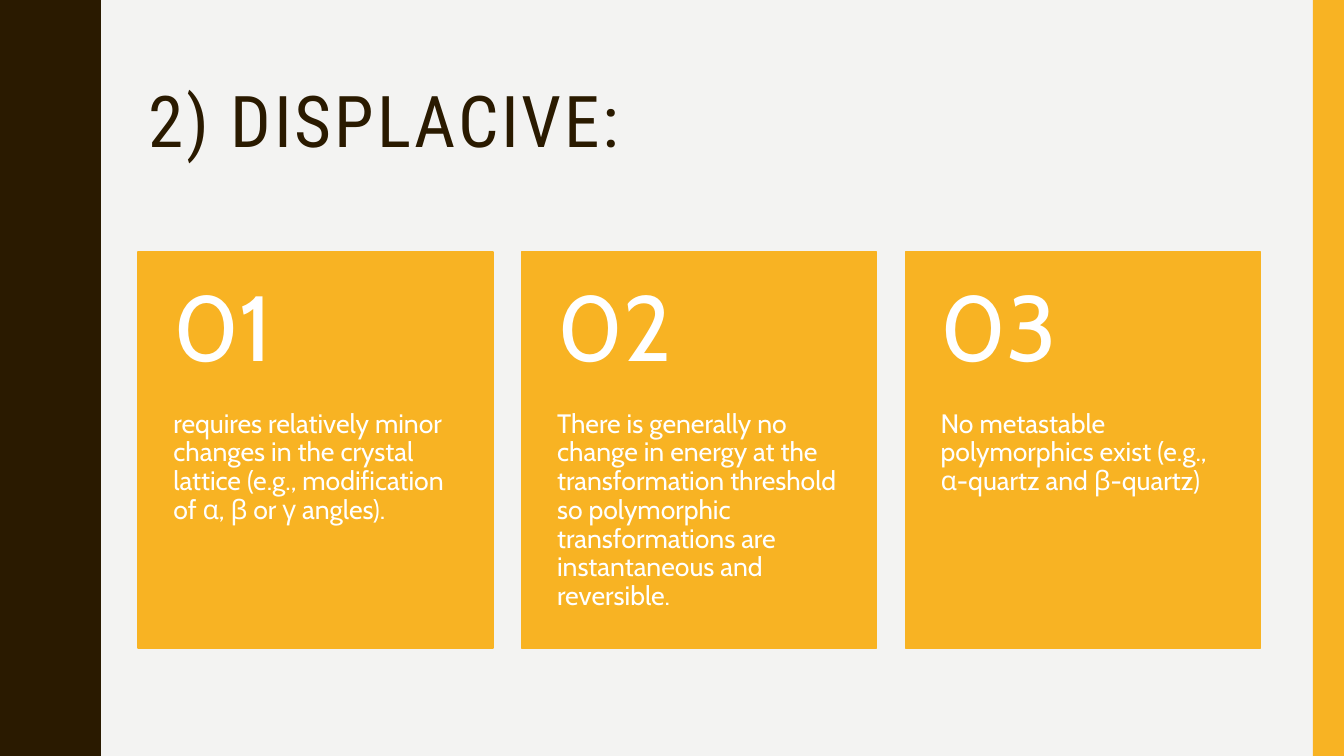
from pptx import Presentation
from pptx.dml.color import RGBColor
from pptx.enum.shapes import MSO_SHAPE
from pptx.enum.text import MSO_ANCHOR, PP_ALIGN
from pptx.util import Inches, Pt

TITLE = "2) DISPLACIVE:"
CARDS = [
    ("01", "requires relatively minor changes in the crystal lattice "
           "(e.g., modification of α, β or γ angles)."),
    ("02", "There is generally no change in energy at the transformation threshold "
           "so polymorphic transformations are instantaneous and reversible."),
    ("03", "No metastable polymorphics exist (e.g., α-quartz and β-quartz)"),
]
COLORS = {"background": "F3F3F2", "dark": "2A1A00", "accent": "F8B323", "white": "FFFFFF"}

SLIDE_WIDTH, SLIDE_HEIGHT = 13.33, 7.5
CARD_LEFT, CARD_TOP, CARD_WIDTH, CARD_HEIGHT = 1.37, 2.5, 3.52, 3.93
CARD_STEP = 3.805
NUMBER_HEIGHT = 1.57
SIDE_BAR_WIDTH = 0.31

# Wavy edge: x and y from one trough to the next crest
WAVE_PERIOD = 1.5
WAVE_RISE = [
    (0.78, 0), (0.78, 0.07), (0.79, 0.14), (0.8, 0.2), (0.81, 0.25), (0.83, 0.29),
    (0.85, 0.33), (0.87, 0.38), (0.89, 0.42), (0.91, 0.46), (0.93, 0.5),
    (0.95, 0.55), (0.96, 0.61), (0.97, 0.68), (0.97, 0.75),
]


def color(name):
    return RGBColor.from_string(COLORS[name])


def paint(shape, name, outlined=False):
    shape.shadow.inherit = False
    shape.fill.solid()
    shape.fill.fore_color.rgb = color(name)
    if outlined:
        shape.line.color.rgb = color(name)
        shape.line.width = Pt(1)
    else:
        shape.line.fill.background()


def write_text(shape, text, *, size, font, fill, anchor=MSO_ANCHOR.TOP,
               insets=(0.1, 0.05, 0.1, 0.05), spacing=0):
    """Fill a shape with one paragraph; insets are left, top, right, bottom in inches."""
    frame = shape.text_frame
    frame.word_wrap = True
    frame.vertical_anchor = anchor
    (frame.margin_left, frame.margin_top,
     frame.margin_right, frame.margin_bottom) = map(Inches, insets)
    paragraph = frame.paragraphs[0]
    paragraph.alignment = PP_ALIGN.LEFT
    paragraph.line_spacing = 0.9
    paragraph.space_before = Pt(0)
    run = paragraph.add_run()
    run.text = text
    run.font.size = Pt(size)
    run.font.name = font
    run.font.color.rgb = color(fill)
    if spacing:
        run._r.get_or_add_rPr().set("spc", str(spacing * 100))


def add_wavy_edge(slide):
    fall = [(x, WAVE_PERIOD - y) for x, y in reversed(WAVE_RISE[:-1])]
    wave = WAVE_RISE + fall
    periods = round(SLIDE_HEIGHT / WAVE_PERIOD)
    points = [(x, y + period * WAVE_PERIOD) for period in range(periods) for x, y in wave]
    builder = slide.shapes.build_freeform(0, 0, scale=Inches(1))
    builder.add_line_segments(points + [(0, SLIDE_HEIGHT)], close=True)
    paint(builder.convert_to_shape(), "dark")


def add_rectangle(slide, left, top, width, height, outlined=False):
    rectangle = slide.shapes.add_shape(
        MSO_SHAPE.RECTANGLE, Inches(left), Inches(top), Inches(width), Inches(height))
    paint(rectangle, "accent", outlined)


def add_card(slide, left, number, text):
    add_rectangle(slide, left, CARD_TOP, CARD_WIDTH, CARD_HEIGHT, outlined=True)
    body = slide.shapes.add_textbox(
        Inches(left), Inches(CARD_TOP + NUMBER_HEIGHT),
        Inches(CARD_WIDTH), Inches(CARD_HEIGHT - NUMBER_HEIGHT))
    write_text(body, text, size=19, font="Cabin", fill="white",
               insets=(0.35, 0, 0.35, 0.36))
    heading = slide.shapes.add_textbox(
        Inches(left), Inches(CARD_TOP), Inches(CARD_WIDTH), Inches(NUMBER_HEIGHT))
    write_text(heading, number, size=66, font="Cabin", fill="white",
               anchor=MSO_ANCHOR.MIDDLE, insets=(0.35, 0.18, 0.35, 0.18))


def main():
    presentation = Presentation()
    presentation.slide_width = Inches(SLIDE_WIDTH)
    presentation.slide_height = Inches(SLIDE_HEIGHT)
    slide = presentation.slides.add_slide(presentation.slide_layouts[5])
    slide.background.fill.solid()
    slide.background.fill.fore_color.rgb = color("background")

    add_wavy_edge(slide)
    add_rectangle(slide, SLIDE_WIDTH - SIDE_BAR_WIDTH, 0, SIDE_BAR_WIDTH, SLIDE_HEIGHT)

    title = slide.shapes.title
    title.left, title.top = Inches(CARD_LEFT), Inches(0.42)
    title.width, title.height = Inches(11.13), Inches(1.63)
    write_text(title, TITLE, size=51, font="Roboto Condensed", fill="dark",
               anchor=MSO_ANCHOR.MIDDLE, spacing=2)

    for index, (number, text) in enumerate(CARDS):
        add_card(slide, CARD_LEFT + index * CARD_STEP, number, text)

    presentation.save("out.pptx")


if __name__ == "__main__":
    main()
